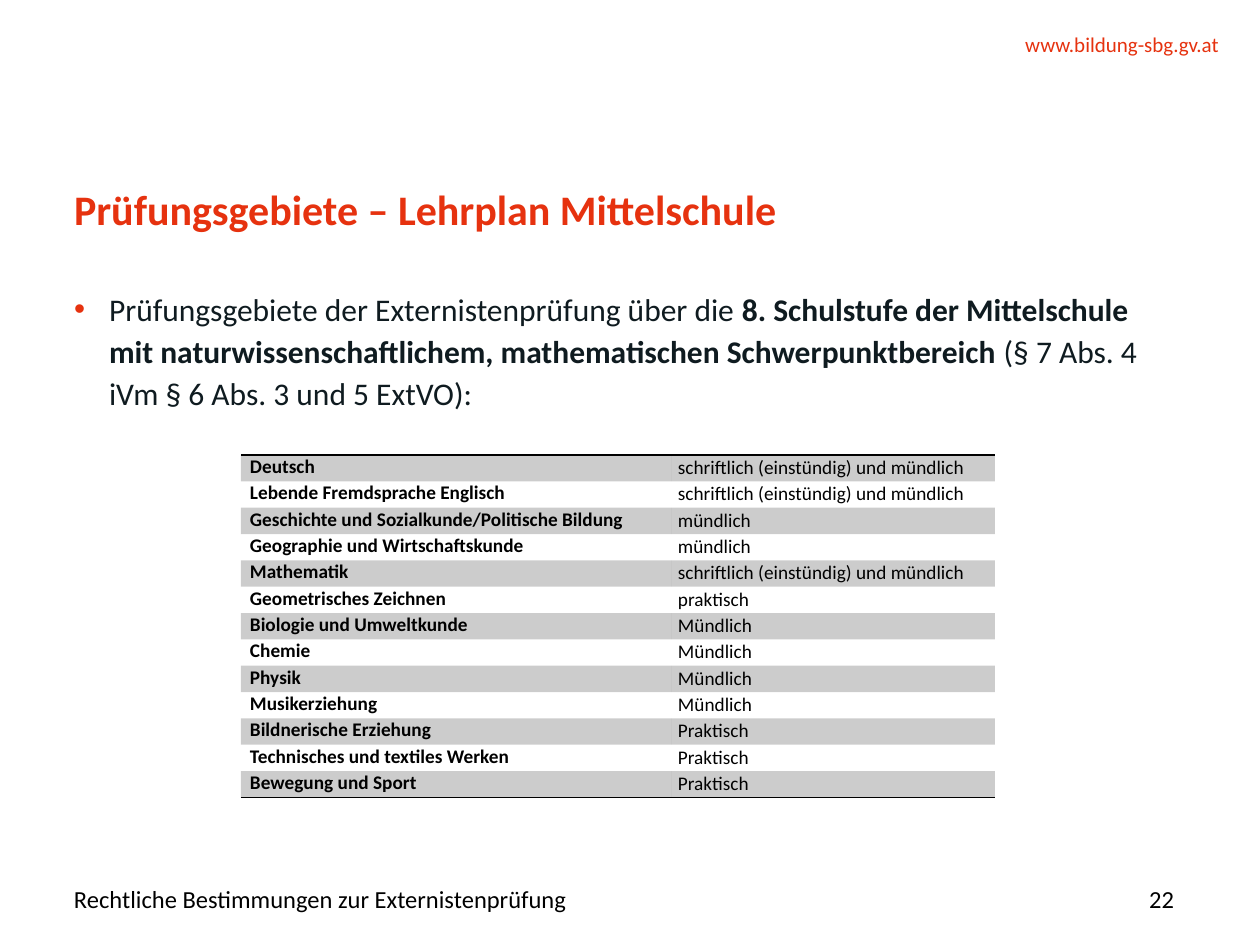
from lxml.etree import SubElement
from pptx import Presentation
from pptx.dml.color import RGBColor
from pptx.enum.text import MSO_ANCHOR, PP_ALIGN
from pptx.oxml.ns import qn
from pptx.util import Emu, Pt

RED, INK, BLACK = "E6320F", "0F1B20", "000000"
NO_GRID_STYLE = "{2D5ABB26-0587-4C30-8999-92F81FD0307C}"
WRITTEN = "schriftlich (einstündig) und mündlich"
SUBJECTS = [
    ("Deutsch", WRITTEN),
    ("Lebende Fremdsprache Englisch", WRITTEN),
    ("Geschichte und Sozialkunde/Politische Bildung", "mündlich"),
    ("Geographie und Wirtschaftskunde", "mündlich"),
    ("Mathematik", WRITTEN),
    ("Geometrisches Zeichnen", "praktisch"),
    ("Biologie und Umweltkunde", "Mündlich"),
    ("Chemie", "Mündlich"),
    ("Physik", "Mündlich"),
    ("Musikerziehung", "Mündlich"),
    ("Bildnerische Erziehung", "Praktisch"),
    ("Technisches und textiles Werken", "Praktisch"),
    ("Bewegung und Sport", "Praktisch"),
]


def px(length):
    """Turn pixels at 126 to the inch into EMU."""
    return Emu(round(length * 914400 / 126))


def color(value):
    """Turn a hex string into a colour."""
    return RGBColor.from_string(value)


def set_values(target, values):
    """Set each named attribute of the target."""
    for name, value in values.items():
        setattr(target, name, value)


def add_span(para, text, size, ink, bold=False):
    """Add one run of formatted text."""
    span = para.add_run()
    span.text = text
    set_values(span.font, {"name": "Calibri", "size": Pt(size), "bold": bold})
    span.font.color.rgb = color(ink)


def add_box(page, place, spans, size, ink, frame=None, para=None):
    """Add a one-paragraph text box from (text, bold) spans."""
    text_frame = page.shapes.add_textbox(*map(px, place)).text_frame
    margins = dict.fromkeys(
        ("margin_left", "margin_top", "margin_right", "margin_bottom"), 0)
    set_values(text_frame, {"word_wrap": True, **margins, **(frame or {})})
    first = text_frame.paragraphs[0]
    set_values(first, para or {})
    for text, bold in spans:
        add_span(first, text, size, ink, bold)
    return first


def add_bullet(para, indent, ink):
    """Give a paragraph a coloured bullet and a hanging indent."""
    properties = para._p.get_or_add_pPr()
    properties.set("marL", str(px(indent)))
    properties.set("indent", str(-px(indent)))
    bullet_color = SubElement(properties, qn("a:buClr"))
    SubElement(bullet_color, qn("a:srgbClr"), val=ink)
    SubElement(properties, qn("a:buFont"), typeface="Arial")
    SubElement(properties, qn("a:buChar"), char="•")


def shade_cell(cell, ink, percent):
    """Fill a cell with a partly transparent colour."""
    cell.fill.solid()
    cell.fill.fore_color.rgb = color(ink)
    fill = cell._tc.tcPr.find(f"{qn('a:solidFill')}/{qn('a:srgbClr')}")
    SubElement(fill, qn("a:alpha"), val=str(percent * 1000))


def add_border(cell, side, ink):
    """Draw a one-point line on one side of a cell."""
    properties = cell._tc.get_or_add_tcPr()
    line = SubElement(properties, qn(f"a:ln{side}"), w=str(Pt(1)))
    fill = SubElement(line, qn("a:solidFill"))
    SubElement(fill, qn("a:srgbClr"), val=ink)
    properties.insert(0, line)


def fill_cell(cell, text, bold, margins):
    """Write the text of a table cell."""
    side, edge = margins
    set_values(cell, {"margin_left": px(side), "margin_right": px(side),
                      "margin_top": px(edge), "margin_bottom": px(edge)})
    para = cell.text_frame.paragraphs[0]
    para.alignment = PP_ALIGN.JUSTIFY
    add_span(para, text, 11, BLACK, bold)


def add_subject_table(page, place, widths):
    """Add the banded table of subjects and kinds of exam."""
    table = page.shapes.add_table(len(SUBJECTS), 2, *map(px, place)).table
    set_values(table, {"first_row": False, "horz_banding": False})
    table._tbl.tblPr.find(qn("a:tableStyleId")).text = NO_GRID_STYLE
    for column, width in zip(table.columns, widths):
        column.width = px(width)
    for index, (row, texts) in enumerate(zip(table.rows, SUBJECTS)):
        subject, exam = row.cells
        fill_cell(subject, texts[0], True, (9, 0))
        fill_cell(exam, texts[1], False, (6, 1))
        for cell in (subject, exam):
            if index % 2:
                cell.fill.background()
            else:
                shade_cell(cell, BLACK, 20)
            if index == 0:
                add_border(cell, "T", BLACK)
            if index == len(SUBJECTS) - 1:
                add_border(cell, "B", BLACK)


def main():
    """Build and save the slide."""
    deck = Presentation()
    set_values(deck, {"slide_width": px(1260), "slide_height": px(945)})
    page = deck.slides.add_slide(deck.slide_layouts[6])
    right = {"alignment": PP_ALIGN.RIGHT}
    middle = {"vertical_anchor": MSO_ANCHOR.MIDDLE}
    add_box(page, (916, 32, 303, 25), [("www.bildung-sbg.gv.at", False)],
            12, RED, para=right)
    add_box(page, (74, 181, 1100, 115),
            [("Prüfungsgebiete – Lehrplan Mittelschule", True)],
            24, RED, para={"line_spacing": Pt(30)})
    body = add_box(
        page, (74, 286, 1100, 541),
        [("Prüfungsgebiete der Externistenprüfung über die ", False),
         ("8. Schulstufe der Mittelschule mit naturwissenschaftlichem, "
          "mathematischen Schwerpunktbereich ", True),
         ("(§ 7 Abs. 4 iVm § 6 Abs. 3 und 5 ExtVO):", False)],
        18, INK, para={"line_spacing": Pt(24), "space_after": Pt(14.2)})
    add_bullet(body, 35, RED)
    add_box(page, (74, 880, 948, 37),
            [("Rechtliche Bestimmungen zur Externistenprüfung", False)],
            14, BLACK, middle)
    add_box(page, (1062, 880, 112, 37), [("22", False)],
            14, BLACK, middle, right)
    add_subject_table(page, (241, 455, 754, 343), (431, 323))
    deck.save("out.pptx")


if __name__ == "__main__":
    main()
